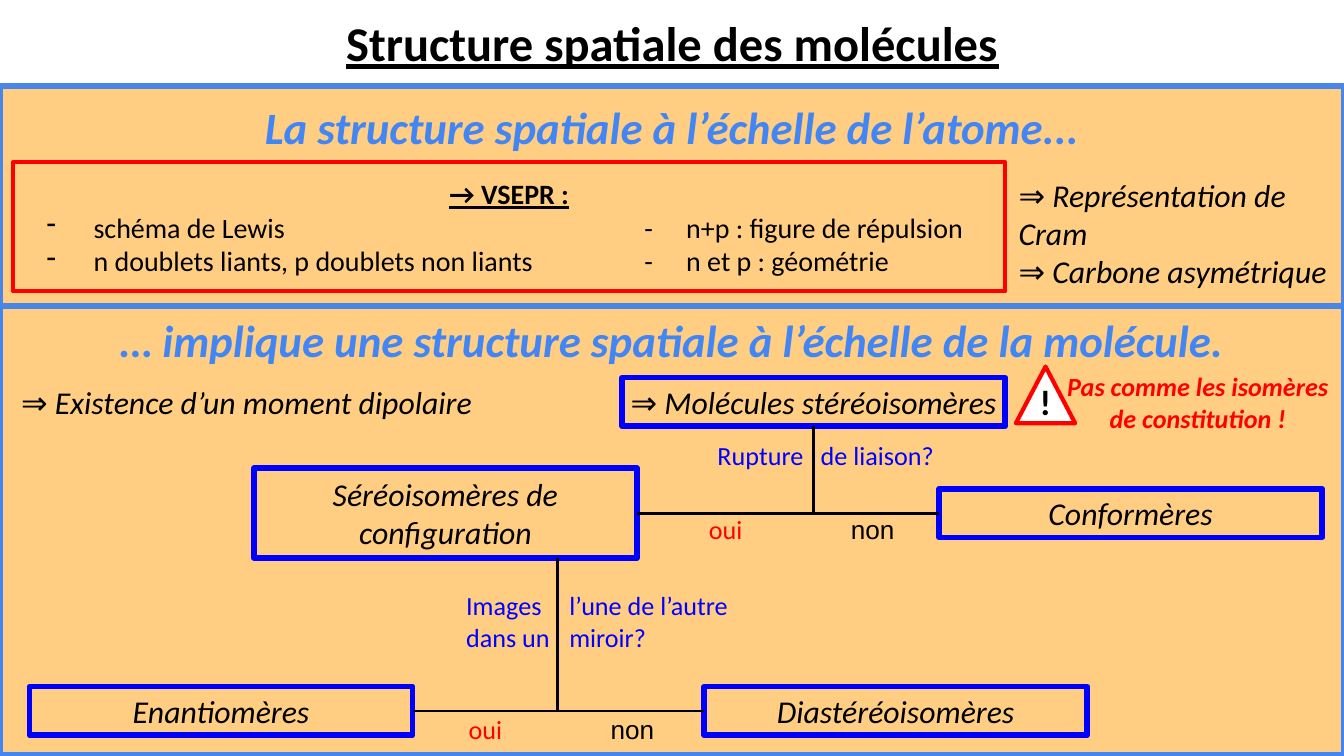
import pptx
import pptx.util
import pptx.dml.color
import pptx.enum.shapes
import pptx.enum.text
import pptx.oxml.ns
import lxml.etree

Cm = pptx.util.Cm
Pt = pptx.util.Pt
RGBColor = pptx.dml.color.RGBColor
MSO_SHAPE = pptx.enum.shapes.MSO_SHAPE
ALIGN = pptx.enum.text.PP_ALIGN
ANCHOR = pptx.enum.text.MSO_ANCHOR
qn = pptx.oxml.ns.qn

BLACK = RGBColor(0x00, 0x00, 0x00)
WHITE = RGBColor(0xFF, 0xFF, 0xFF)
RED = RGBColor(0xFF, 0x00, 0x00)
BLUE = RGBColor(0x00, 0x00, 0xFF)
HEADING_BLUE = RGBColor(0x42, 0x85, 0xF4)
PANEL_BLUE = RGBColor(0x4A, 0x86, 0xE8)
ORANGE = RGBColor(0xFF, 0xCE, 0x83)

presentation = pptx.Presentation()
presentation.slide_width = Cm(25.4)
presentation.slide_height = Cm(14.29)
slide = presentation.slides.add_slide(presentation.slide_layouts[6])


def add_box(kind, left, top, width, height, line, weight, fill=None):
    shape = slide.shapes.add_shape(kind, Cm(left), Cm(top), Cm(width), Cm(height))
    shape.shadow.inherit = False
    shape.line.color.rgb = line
    shape.line.width = Pt(weight)
    if fill is None:
        shape.fill.background()
    else:
        shape.fill.solid()
        shape.fill.fore_color.rgb = fill
    return shape


def write(shape, text, size, color=BLACK, style="", align=ALIGN.CENTER,
          anchor=ANCHOR.TOP, inset=0.25, tabs=(), font="Calibri"):
    """Fill a shape with text; style holds any of b, i, u, and tabs are in cm."""
    frame = shape.text_frame
    frame.word_wrap = True
    frame.vertical_anchor = anchor
    frame.margin_left = frame.margin_right = Cm(inset)
    frame.margin_top = frame.margin_bottom = Cm(inset)
    frame.text = text
    for paragraph in frame.paragraphs:
        paragraph.alignment = align
        if tabs:
            tab_list = lxml.etree.SubElement(
                paragraph._p.get_or_add_pPr(), qn("a:tabLst"))
            for position in tabs:
                lxml.etree.SubElement(
                    tab_list, qn("a:tab"), pos=str(Cm(position)), algn="l")
        paragraph.font.name = font
        paragraph.font.size = Pt(size)
        paragraph.font.color.rgb = color
        paragraph.font.bold = "b" in style
        paragraph.font.italic = "i" in style
        paragraph.font.underline = "u" in style
    return frame


# Panels
add_box(MSO_SHAPE.RECTANGLE, 0, 5.79, 25.4, 8.48, HEADING_BLUE, 3, ORANGE)
atom_panel = add_box(MSO_SHAPE.RECTANGLE, 0, 1.63, 25.4, 4.15, PANEL_BLUE, 3, ORANGE)
write(atom_panel, "La structure spatiale à l’échelle de l’atome...", 24, HEADING_BLUE, "bi")

# VSEPR frame: two bulleted lines, with a second column set by tabs
vsepr = add_box(MSO_SHAPE.RECTANGLE, 0.25, 3.07, 18.75, 2.44, RED, 2.25)
vsepr_frame = write(
    vsepr,
    "→ VSEPR :\n"
    "schéma de Lewis\t-\tn+p : figure de répulsion\n"
    "n doublets liants, p doublets non liants\t-\tn et p : géométrie",
    15, align=ALIGN.LEFT, anchor=ANCHOR.MIDDLE, tabs=(11.68, 12.47))
vsepr_title, *vsepr_items = vsepr_frame.paragraphs
vsepr_title.alignment = ALIGN.CENTER
vsepr_title.font.bold = vsepr_title.font.underline = True
for paragraph in vsepr_items:
    properties = paragraph._p.get_or_add_pPr()
    properties.set("marL", str(Cm(1.27)))
    properties.set("indent", str(Cm(-0.89)))
    bullet = lxml.etree.Element(qn("a:buChar"), char="-")
    properties.insert(0, bullet)

# Warning sign
add_box(MSO_SHAPE.ISOSCELES_TRIANGLE, 19.2, 6.93, 1.12, 1.07, RED, 2.25, WHITE)

# Free text: left, top, width, height, text, size, colour, style, alignment
LEFT, CENTER = ALIGN.LEFT, ALIGN.CENTER
texts = [
    (5.46, 0, 14.5, 1.63, "Structure spatiale des molécules", 26, BLACK, "bu", CENTER),
    (0, 5.66, 25.4, 1.55, "… implique une structure spatiale à l’échelle de la molécule.",
     24, HEADING_BLUE, "bi", CENTER),
    (0.15, 6.98, 9.78, 1.24, "⇒ Existence d’un moment dipolaire", 17, BLACK, "i", LEFT),
    (19, 3.07, 6.4, 2.69, "⇒ Représentation de Cram\n⇒ Carbone asymétrique",
     17, BLACK, "i", LEFT),
    (19.2, 6.93, 1.12, 1.32, "!", 19, BLACK, "b", CENTER),
    (19.81, 6.76, 5.66, 1.7, "Pas comme les isomères de constitution !",
     14, RED, "bi", CENTER),
]
for left, top, width, height, text, size, color, style, align in texts:
    box = slide.shapes.add_textbox(Cm(left), Cm(top), Cm(width), Cm(height))
    write(box, text, size, color, style, align)

# Classification boxes
nodes = {}
for text, left, top, height in [
    ("⇒ Molécules stéréoisomères", 11.76, 7.14, 0.92),
    ("Séréoisomères de configuration", 4.8, 8.85, 1.7),
    ("Conformères", 17.75, 9.24, 0.92),
    ("Enantiomères", 0.56, 12.98, 0.92),
    ("Diastéréoisomères", 13.31, 12.98, 0.92),
]:
    node = add_box(MSO_SHAPE.RECTANGLE, left, top, 7.24, height, BLUE, 3)
    write(node, text, 17, style="i", anchor=ANCHOR.MIDDLE, inset=0)
    nodes[text] = node
stereoisomers, configuration, conformers, enantiomers, diastereoisomers = nodes.values()

# Each branching: a trunk down from the parent and a bar between the two answers
for parent, yes_node, no_node, trunk_x in [
    (stereoisomers, configuration, conformers, 15.38),
    (configuration, enantiomers, diastereoisomers, 10.54),
]:
    bar_y = yes_node.top + yes_node.height // 2
    trunk = slide.shapes.add_connector(
        pptx.enum.shapes.MSO_CONNECTOR.STRAIGHT,
        Cm(trunk_x), parent.top + parent.height, Cm(trunk_x), bar_y)
    if parent is stereoisomers:
        trunk.begin_connect(parent, 2)
    bar = slide.shapes.add_connector(
        pptx.enum.shapes.MSO_CONNECTOR.STRAIGHT,
        yes_node.left + yes_node.width, bar_y, no_node.left, bar_y)
    bar.begin_connect(yes_node, 3)
    bar.end_connect(no_node, 1)
    for connector in (trunk, bar):
        connector.line.color.rgb = BLACK
        connector.line.width = Pt(1.5)
        lxml.etree.SubElement(connector._element.spPr, qn("a:effectLst"))

# Questions, split by a tab around the trunk
for left, top, height, text in [
    (13.31, 8.05, 1.12, "Rupture\tde liaison?"),
    (8.56, 10.9, 1.7, "Images\tl’une de l’autre\vdans un\tmiroir?"),
]:
    question = slide.shapes.add_textbox(Cm(left), Cm(top), Cm(5.66), Cm(height))
    write(question, text, 14, BLUE, align=LEFT, tabs=(1.95,))

# Answers
for left, top in [(12.19, 9.45), (7.65, 13.23)]:
    yes = slide.shapes.add_textbox(Cm(left), Cm(top), Cm(3.05), Cm(1.12))
    write(yes, "oui", 14, RED)
    no = slide.shapes.add_textbox(Cm(left + 2.64), Cm(top), Cm(3.33), Cm(1.12))
    write(no, "non", 14, font="Arial")

presentation.save("out.pptx")
